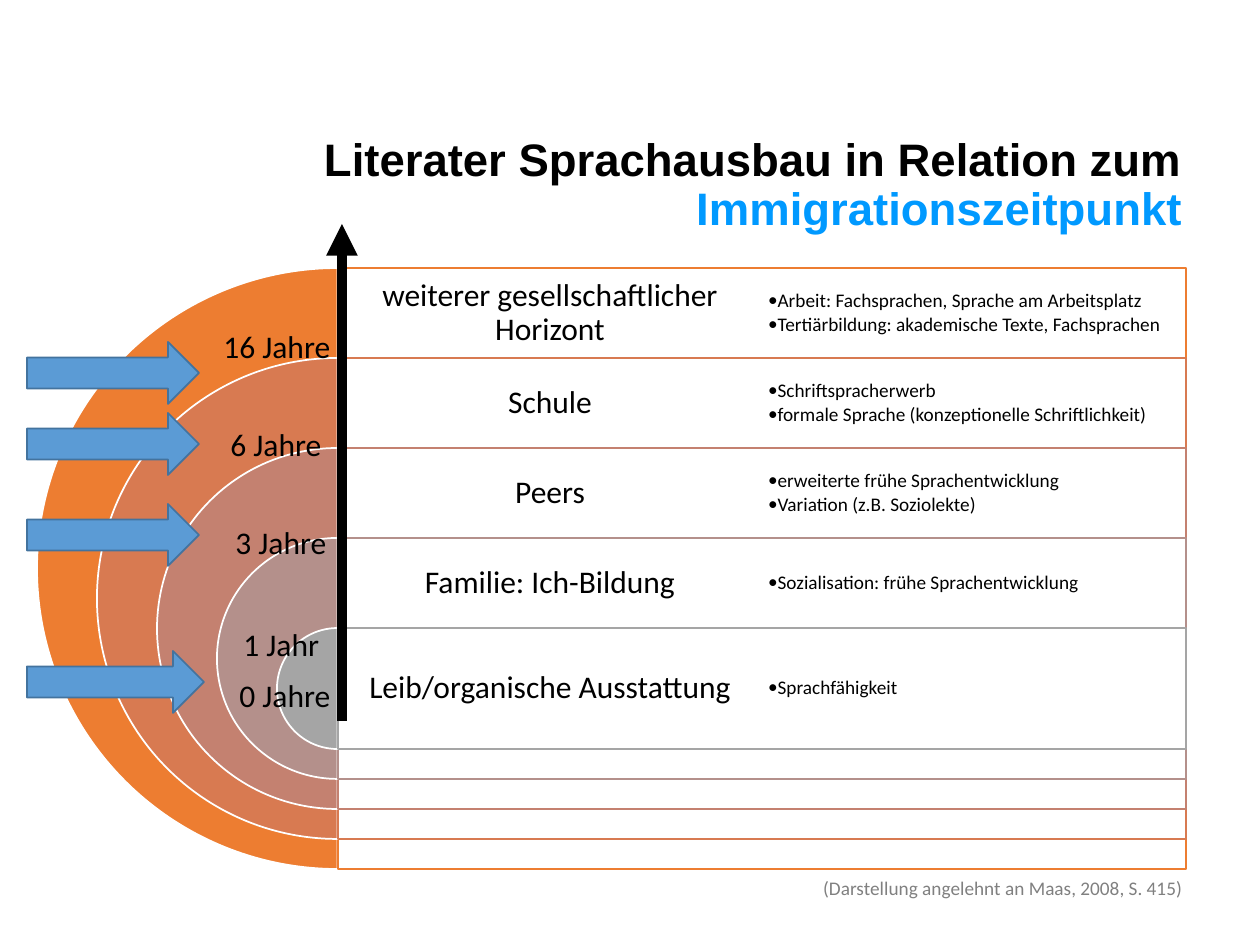
from dataclasses import dataclass
from typing import Any

from lxml import etree
from pptx import Presentation
from pptx.dml.color import RGBColor
from pptx.enum.shapes import MSO_CONNECTOR, MSO_SHAPE
from pptx.enum.text import MSO_ANCHOR, MSO_AUTO_SIZE, PP_ALIGN
from pptx.oxml.ns import qn
from pptx.util import Emu, Pt

LEFT, CENTER, RIGHT = PP_ALIGN.LEFT, PP_ALIGN.CENTER, PP_ALIGN.RIGHT
TOP, MIDDLE = MSO_ANCHOR.TOP, MSO_ANCHOR.MIDDLE
FIXED, GROW = MSO_AUTO_SIZE.NONE, MSO_AUTO_SIZE.SHAPE_TO_FIT_TEXT
PIE, RECTANGLE, RIGHT_ARROW = MSO_SHAPE.PIE, MSO_SHAPE.RECTANGLE, MSO_SHAPE.RIGHT_ARROW
STRAIGHT = MSO_CONNECTOR.STRAIGHT

PX_PER_INCH = 126
EMU_PER_INCH = 914400
AXIS_X, RINGS_TOP, OUTER_SIZE, RING_STEP, SIZE_STEP = 338, 268, 601, 90, 120
ROW_WIDTH, COLUMN_WIDTH = 848, 424


@dataclass(frozen=True)
class Box:
    left: int
    top: int
    width: int
    height: int


@dataclass(frozen=True)
class Stage:
    name: str
    color: str
    points: tuple[str, ...]


@dataclass(frozen=True)
class AgeLabel:
    text: str
    box: Box


STAGES = (
    Stage("weiterer gesellschaftlicher Horizont", "ED7D31",
          ("Arbeit: Fachsprachen, Sprache am Arbeitsplatz",
           "Tertiärbildung: akademische Texte, Fachsprachen")),
    Stage("Schule", "D87A51",
          ("Schriftspracherwerb", "formale Sprache (konzeptionelle Schriftlichkeit)")),
    Stage("Peers", "C48170",
          ("erweiterte frühe Sprachentwicklung", "Variation (z.B. Soziolekte)")),
    Stage("Familie: Ich-Bildung", "B4908B", ("Sozialisation: frühe Sprachentwicklung",)),
    Stage("Leib/organische Ausstattung", "A5A5A5", ("Sprachfähigkeit",)),
)
AGE_LABELS = (
    AgeLabel("0 Jahre", Box(227, 670, 118, 50)),
    AgeLabel("1 Jahr", Box(231, 619, 102, 50)),
    AgeLabel("3 Jahre", Box(223, 517, 118, 50)),
    AgeLabel("6 Jahre", Box(218, 419, 118, 50)),
    AgeLabel("16 Jahre", Box(211, 321, 134, 50)),
)
ARROWS = (Box(27, 651, 177, 62), Box(27, 504, 172, 62),
          Box(27, 413, 172, 62), Box(27, 342, 172, 62))


def px(length: int) -> Emu:
    return Emu(round(length * EMU_PER_INCH / PX_PER_INCH))


def rgb(color: str) -> RGBColor:
    return RGBColor.from_string(color)


def apply(target: Any, values: dict[str, Any]) -> None:
    for name, value in values.items():
        setattr(target, name, value)


def place(box: Box) -> tuple[Emu, ...]:
    return px(box.left), px(box.top), px(box.width), px(box.height)


def add_span(para: Any, text: str, size: int, color: str,
             font: str = "Calibri", bold: bool = False) -> None:
    span = para.add_run()
    span.text = text
    apply(span.font, {"name": font, "size": Pt(size), "bold": bold})
    span.font.color.rgb = rgb(color)


def add_bullet(para: Any, size: int) -> None:
    properties = para._p.get_or_add_pPr()
    properties.set("marL", str(px(8)))
    properties.set("indent", str(-px(8)))
    etree.SubElement(properties, qn("a:buSzPct")).set("val", "100000")
    etree.SubElement(properties, qn("a:buFont")).set("typeface", "Calibri")
    etree.SubElement(properties, qn("a:buChar")).set("char", "•")
    apply(para.font, {"name": "Calibri", "size": Pt(size)})


def add_text(slide: Any, box: Box, lines: tuple[str, ...], size: int, color: str = "000000",
             align: Any = LEFT, inset: int = 0, bulleted: bool = False,
             frame_format: dict[str, Any] | None = None) -> None:
    frame = slide.shapes.add_textbox(*place(box)).text_frame
    apply(frame, {"word_wrap": True, "auto_size": FIXED, "vertical_anchor": TOP}
          | (frame_format or {}))
    if inset:
        sides = ("margin_left", "margin_top", "margin_right", "margin_bottom")
        apply(frame, dict.fromkeys(sides, px(inset)))
    for index, line in enumerate(lines):
        para = frame.add_paragraph() if index else frame.paragraphs[0]
        para.alignment = align
        if inset:
            para.line_spacing = 0.9
        if bulleted:
            para.space_after = Pt(1.65)
            add_bullet(para, size)
        add_span(para, line, size, color)


def add_preset(slide: Any, kind: Any, box: Box, fill: str, line: str,
               adjustments: tuple[float, ...] = (), opacity: int = 100) -> None:
    shape = slide.shapes.add_shape(kind, *place(box))
    shape.shadow.inherit = False
    shape.fill.solid()
    shape.fill.fore_color.rgb = rgb(fill)
    shape.line.color.rgb = rgb(line)
    shape.line.width = Pt(1)
    for index, value in enumerate(adjustments):
        shape.adjustments[index] = value
    if opacity < 100:
        fill_color = shape._element.spPr.find(qn("a:solidFill"))[0]
        etree.SubElement(fill_color, qn("a:alpha")).set("val", str(opacity * 1000))


def add_stage(slide: Any, stage: Stage, index: int) -> None:
    size = OUTER_SIZE - SIZE_STEP * index
    top = RINGS_TOP + RING_STEP * index
    is_innermost = index == len(STAGES) - 1
    height = size if is_innermost else RING_STEP
    centered = {"vertical_anchor": MIDDLE}
    add_preset(slide, PIE, Box(AXIS_X - (size + 1) // 2, top, size, size),
               stage.color, "FFFFFF", (54, 162))
    add_preset(slide, RECTANGLE, Box(AXIS_X, top, ROW_WIDTH, size),
               "FFFFFF", stage.color, opacity=90)
    add_text(slide, Box(AXIS_X, top, COLUMN_WIDTH, height), (stage.name,), 18,
             align=CENTER, inset=9, frame_format=centered)
    add_text(slide, Box(AXIS_X + COLUMN_WIDTH, top, COLUMN_WIDTH, height), stage.points, 11,
             inset=6, bulleted=True, frame_format=centered)


def add_time_axis(slide: Any) -> None:
    axis = slide.shapes.add_connector(STRAIGHT, px(342), px(721), px(342), px(224))
    axis.line.color.rgb = rgb("000000")
    axis.line.width = Pt(6)
    etree.SubElement(axis.line._get_or_add_ln(), qn("a:tailEnd")).set("type", "triangle")
    etree.SubElement(axis._element.spPr, qn("a:effectLst"))


def format_title(slide: Any) -> None:
    title = slide.shapes.title
    apply(title, dict(zip(("left", "top", "width", "height"), place(Box(27, 123, 1168, 126)))))
    apply(title.text_frame, {"word_wrap": True, "auto_size": FIXED, "vertical_anchor": MIDDLE})
    para = title.text_frame.paragraphs[0]
    apply(para, {"alignment": RIGHT, "line_spacing": 0.9})
    add_span(para, "Literater Sprachausbau in Relation zum ", 26, "000000", "Arial", True)
    add_span(para, "Immigrationszeitpunkt", 26, "0099FF", "Arial", True)


def main() -> None:
    deck = Presentation()
    apply(deck, {"slide_width": px(1260), "slide_height": px(945)})
    page = deck.slides.add_slide(deck.slide_layouts.get_by_name("Title Only"))
    format_title(page)
    add_text(page, Box(759, 870, 436, 36), ("(Darstellung angelehnt an Maas, 2008, S. 415)",),
             11, "808080", RIGHT, frame_format={"auto_size": GROW})
    for index, stage in enumerate(STAGES):
        add_stage(page, stage, index)
    add_time_axis(page)
    for label in AGE_LABELS:
        add_text(page, label.box, (label.text,), 18,
                 frame_format={"word_wrap": False, "auto_size": GROW})
    for arrow in ARROWS:
        add_preset(page, RIGHT_ARROW, arrow, "5B9BD5", "43739E", (0.5, 0.5))
    deck.save("out.pptx")


if __name__ == "__main__":
    main()
